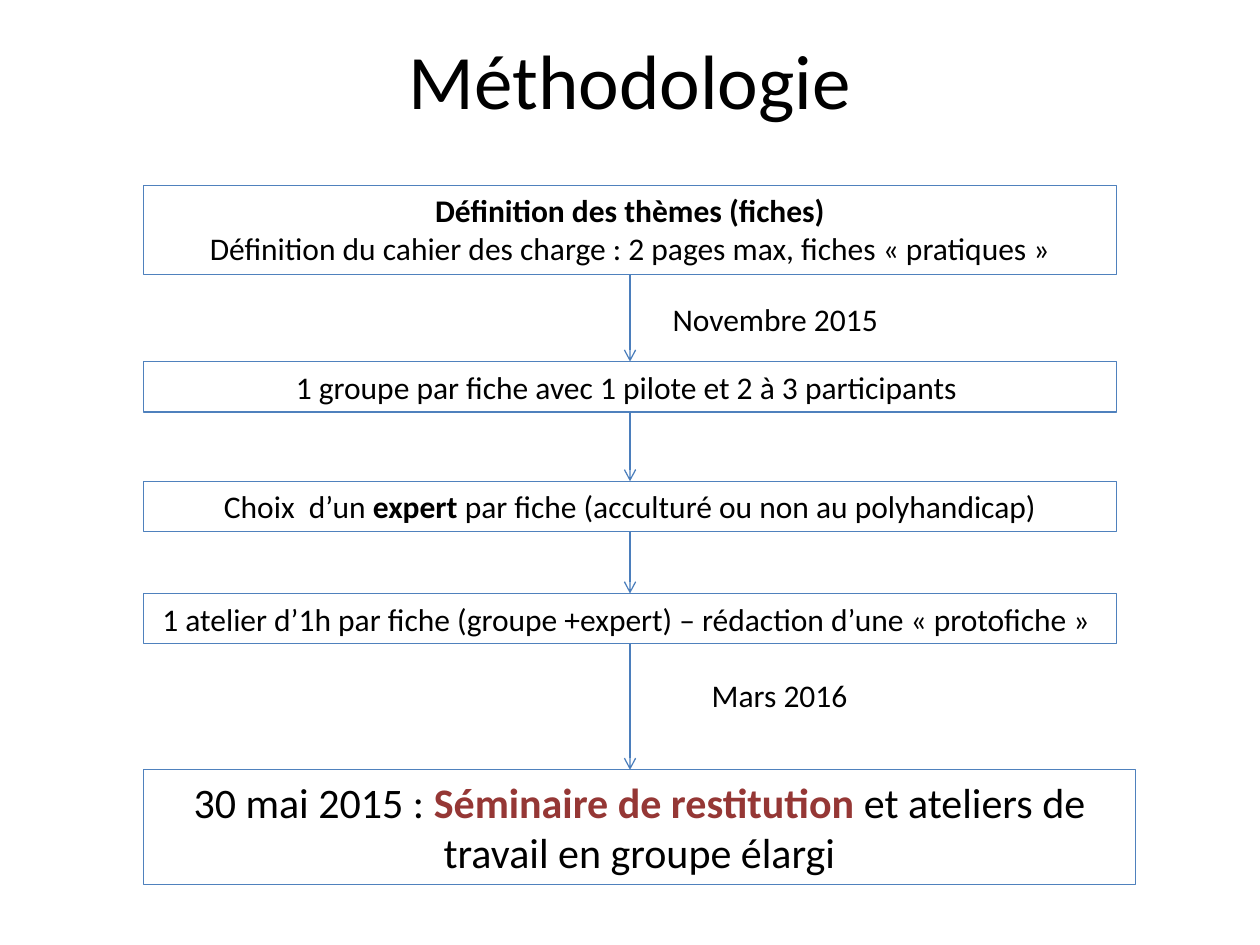
"""Build the methodology slide: five steps joined by arrows, with two dates."""
from lxml import etree
from pptx import Presentation
from pptx import util as u
from pptx.dml import color
from pptx.enum import shapes, text
from pptx.oxml import ns

TITLE = "Méthodologie"
BLACK, RED, BORDER, ARROW = "000000", "953735", "4F81BD", "4B7EBC"
LEFT, CENTER = 1.14, 5
BOLD = {"bold": True}
STEPS = [
    {"top": 1.47, "height": 0.71, "paras": [
        [("Définition des thèmes (fiches)", BOLD)],
        [("Définition du cahier des charge : 2 pages max, fiches « pratiques »", {})]]},
    {"top": 2.87, "height": 0.4, "paras": [
        [("1 groupe par fiche avec 1 pilote et 2 à 3 participants ", {})]]},
    {"top": 3.82, "height": 0.4, "paras": [
        [("Choix  d’un ", {}), ("expert", BOLD),
         (" par fiche (acculturé ou non au polyhandicap)", {})]]},
    {"top": 4.71, "height": 0.4, "paras": [
        [("1 atelier d’1h par fiche (groupe +expert) – rédaction d’une « protofiche » ", {})]]},
    {"top": 6.11, "height": 0.91, "width": 7.87, "size": 24, "paras": [
        [("30 mai 2015 : ", {}),
         ("Séminaire de restitution ", {"bold": True, "ink": RED}),
         ("et ateliers de travail en groupe élargi", {})]]},
]
DATES = [("Novembre 2015", 5.24, 2.33, 2.6), ("Mars 2016", 5.55, 5.32, 2.28)]


def rgb(value):
    return color.RGBColor.from_string(value)


def write(frame, paras, size=18, align=text.PP_ALIGN.CENTER, anchor=text.MSO_ANCHOR.TOP):
    frame.word_wrap = True
    frame.vertical_anchor = anchor
    for index, spans in enumerate(paras):
        para = frame.paragraphs[0] if index == 0 else frame.add_paragraph()
        para.alignment = align
        for words, style in spans:
            span = para.add_run()
            span.text = words
            span.font.name = "Calibri"
            span.font.size = u.Pt(size)
            span.font.bold = style.get("bold", False)
            span.font.color.rgb = rgb(style.get("ink", BLACK))


def add_step(slide, top, height, paras, width=7.72, size=18):
    box = slide.shapes.add_shape(shapes.MSO_SHAPE.RECTANGLE, u.Inches(LEFT), u.Inches(top),
                                 u.Inches(width), u.Inches(height))
    box.shadow.inherit = False
    box.fill.background()
    box.line.color.rgb = rgb(BORDER)
    box.line.width = u.Pt(0.75)
    write(box.text_frame, paras, size)


def add_arrow(slide, start, end):
    arrow = slide.shapes.add_connector(shapes.MSO_CONNECTOR.STRAIGHT, u.Inches(CENTER),
                                       u.Inches(start), u.Inches(CENTER), u.Inches(end))
    arrow.line.color.rgb = rgb(ARROW)
    arrow.line.width = u.Pt(0.75)
    etree.SubElement(arrow.line._get_or_add_ln(), ns.qn("a:tailEnd"), type="arrow")
    etree.SubElement(arrow._element.spPr, ns.qn("a:effectLst"))


def main():
    deck = Presentation()
    deck.slide_width, deck.slide_height = u.Inches(10), u.Inches(7.5)
    slide = deck.slides.add_slide(deck.slide_layouts[5])
    title = slide.shapes.title
    title.left, title.top = u.Inches(0.5), u.Inches(0)
    title.width, title.height = u.Inches(9), u.Inches(1.25)
    write(title.text_frame, [[(TITLE, {})]], size=44, anchor=text.MSO_ANCHOR.MIDDLE)
    for step in STEPS:
        add_step(slide, **step)
    for step, following in zip(STEPS, STEPS[1:]):
        add_arrow(slide, step["top"] + step["height"], following["top"])
    for words, left, top, width in DATES:
        box = slide.shapes.add_textbox(u.Inches(left), u.Inches(top),
                                       u.Inches(width), u.Inches(0.4))
        write(box.text_frame, [[(words, {})]], align=text.PP_ALIGN.LEFT)
    deck.save("out.pptx")


if __name__ == "__main__":
    main()
